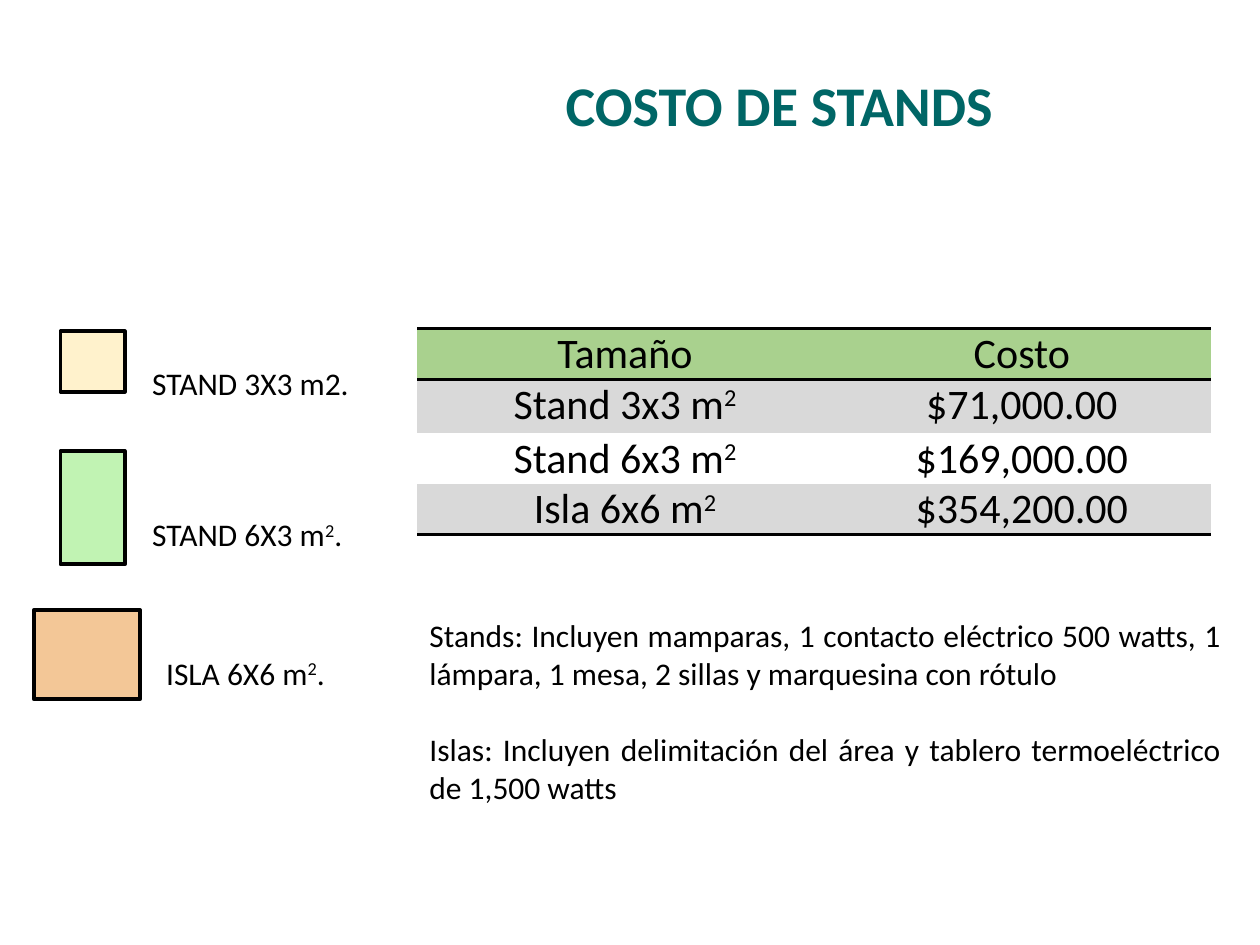
from typing import NamedTuple

from lxml.etree import SubElement
from pptx import Presentation
from pptx.dml.color import RGBColor
from pptx.enum.shapes import MSO_SHAPE
from pptx.enum.text import MSO_ANCHOR, PP_ALIGN
from pptx.oxml.ns import qn
from pptx.util import Inches, Pt

FONT = "Calibri"
BLACK = RGBColor(0x00, 0x00, 0x00)
WHITE = RGBColor(0xFF, 0xFF, 0xFF)
TEAL = RGBColor(0x00, 0x66, 0x66)
CREAM = RGBColor(0xFF, 0xF2, 0xCC)
MINT = RGBColor(0xC1, 0xF3, 0xB3)
PEACH = RGBColor(0xF3, 0xC7, 0x97)
HEADER_GREEN = RGBColor(0xA9, 0xD1, 0x8E)
BAND_GRAY = RGBColor(0xD9, 0xD9, 0xD9)
PLAIN_TABLE_STYLE = "{2D5ABB26-0587-4C30-8999-92F81FD0307C}"


class Box(NamedTuple):
    left: float
    top: float
    width: float
    height: float

    def lengths(self) -> list:
        return [Inches(value) for value in self]


class LegendItem(NamedTuple):
    label: str
    color: RGBColor
    swatch: Box
    label_left: float
    label_top: float


LEGEND = [
    LegendItem("STAND 3X3 m2.", CREAM, Box(0.48, 2.63, 0.51, 0.48), 1.11, 2.84),
    LegendItem("STAND 6X3 m^2^.", MINT, Box(0.48, 3.58, 0.51, 0.9), 1.11, 4.04),
    LegendItem("ISLA 6X6 m^2^.", PEACH, Box(0.27, 4.84, 0.84, 0.71), 1.22, 5.14),
]
COSTS = [
    ("Tamaño", "Costo"),
    ("Stand 3x3 m^2^", "$71,000.00"),
    ("Stand 6x3 m^2^", "$169,000.00"),
    ("Isla 6x6 m^2^", "$354,200.00"),
]
ROW_FILLS = [HEADER_GREEN, BAND_GRAY, WHITE, BAND_GRAY]
ROW_HEIGHTS = [0.4, 0.43, 0.4, 0.4]
COLUMN_WIDTHS = [3.3, 3]
RULED_SIDES = {0: ("a:lnT", "a:lnB"), len(COSTS) - 1: ("a:lnB",)}
NOTES = [
    "Stands: Incluyen mamparas, 1 contacto eléctrico 500 watts, 1 lámpara, "
    "1 mesa, 2 sillas y marquesina con rótulo",
    "Islas: Incluyen delimitación del área y tablero termoeléctrico de 1,500 watts",
]


def write(paragraph, text: str, size: float, color: RGBColor = BLACK,
          align: PP_ALIGN = PP_ALIGN.LEFT, bold: bool = False) -> None:
    """Fill a paragraph; text between carets is superscript."""
    paragraph.alignment = align
    for index, part in enumerate(text.split("^")):
        if not part:
            continue
        run = paragraph.add_run()
        run.text = part
        run.font.name = FONT
        run.font.size = Pt(size)
        run.font.bold = bold
        run.font.color.rgb = color
        if index % 2:
            run.font._element.set("baseline", "30000")


def add_text_frame(slide, box: Box):
    frame = slide.shapes.add_textbox(*box.lengths()).text_frame
    frame.word_wrap = True
    return frame


def add_title(slide) -> None:
    title = slide.shapes.title
    title.left, title.top, title.width, title.height = Box(2.68, 0.51, 7.01, 0.64).lengths()
    title.text_frame.vertical_anchor = MSO_ANCHOR.TOP
    write(title.text_frame.paragraphs[0], "COSTO DE STANDS", 32, TEAL,
          PP_ALIGN.CENTER, bold=True)


def add_legend_item(slide, item: LegendItem) -> None:
    swatch = slide.shapes.add_shape(MSO_SHAPE.RECTANGLE, *item.swatch.lengths())
    swatch.shadow.inherit = False
    swatch.fill.solid()
    swatch.fill.fore_color.rgb = item.color
    swatch.line.color.rgb = BLACK
    swatch.line.width = Pt(2.25)
    frame = add_text_frame(slide, Box(item.label_left, item.label_top, 3.15, 0.4))
    write(frame.paragraphs[0], item.label, 18)


def add_rule(cell, side: str) -> None:
    line = SubElement(cell._tc.get_or_add_tcPr(), qn(side), w=str(Pt(2)))
    fill = SubElement(line, qn("a:solidFill"))
    SubElement(fill, qn("a:srgbClr"), val=str(BLACK))


def add_cost_table(slide) -> None:
    box = Box(3.31, 2.61, sum(COLUMN_WIDTHS), sum(ROW_HEIGHTS))
    table = slide.shapes.add_table(len(COSTS), len(COLUMN_WIDTHS), *box.lengths()).table
    table._tbl.tblPr.find(qn("a:tableStyleId")).text = PLAIN_TABLE_STYLE
    table.horz_banding = False
    for column, width in zip(table.columns, COLUMN_WIDTHS):
        column.width = Inches(width)
    for row_index, texts in enumerate(COSTS):
        table.rows[row_index].height = Inches(ROW_HEIGHTS[row_index])
        for column_index, text in enumerate(texts):
            cell = table.cell(row_index, column_index)
            cell.margin_left = cell.margin_right = Inches(0.07)
            cell.margin_top = cell.margin_bottom = 0
            for side in RULED_SIDES.get(row_index, ()):
                add_rule(cell, side)
            cell.fill.solid()
            cell.fill.fore_color.rgb = ROW_FILLS[row_index]
            write(cell.text_frame.paragraphs[0], text, 24, align=PP_ALIGN.CENTER)


def add_notes(slide) -> None:
    frame = add_text_frame(slide, Box(3.31, 4.84, 6.48, 1.62))
    first, second = frame.paragraphs[0], frame.add_paragraph()
    second.space_before = Pt(22)
    for paragraph, text in zip((first, second), NOTES):
        write(paragraph, text, 18, align=PP_ALIGN.JUSTIFY)


def main() -> None:
    presentation = Presentation()
    presentation.slide_width = Inches(10)
    presentation.slide_height = Inches(7.5)
    slide = presentation.slides.add_slide(presentation.slide_layouts[5])
    add_title(slide)
    for item in LEGEND:
        add_legend_item(slide, item)
    add_cost_table(slide)
    add_notes(slide)
    presentation.save("out.pptx")


if __name__ == "__main__":
    main()
